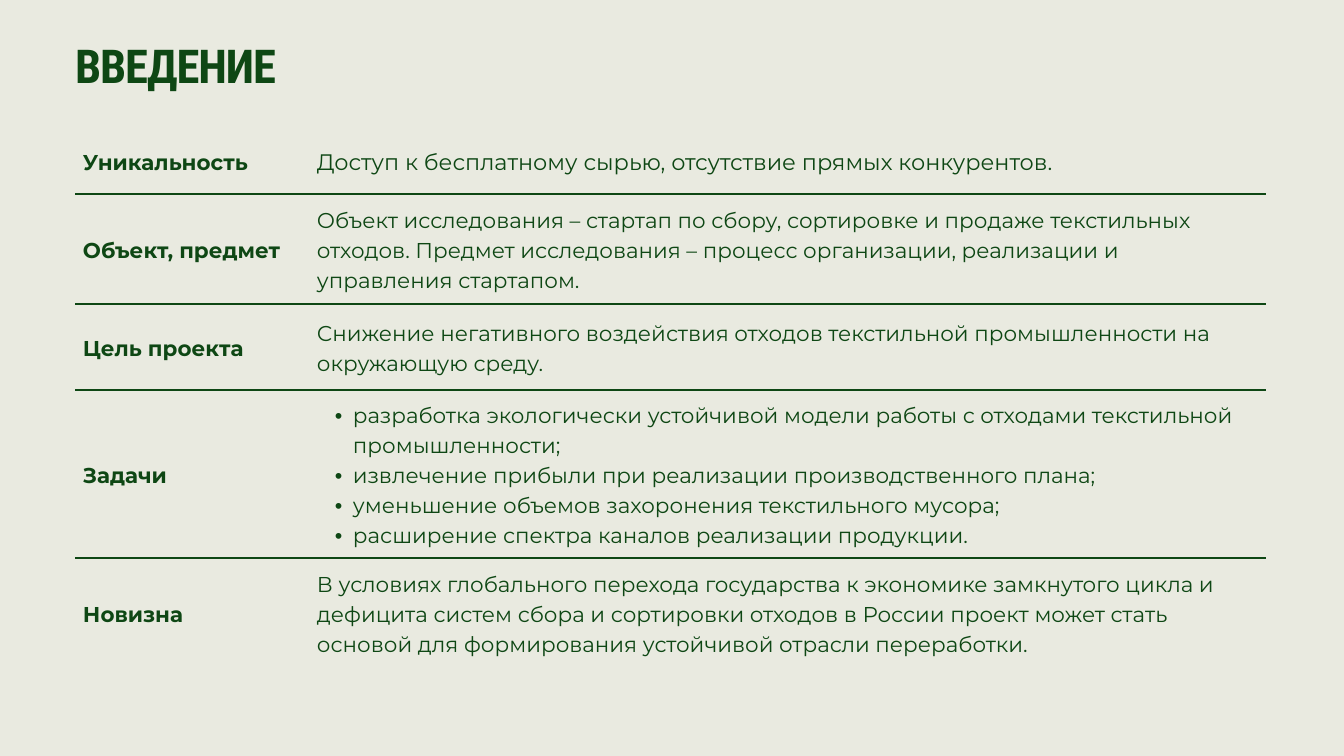
from lxml import etree
from pptx import Presentation
from pptx.dml.color import RGBColor
from pptx.enum.text import MSO_ANCHOR, MSO_AUTO_SIZE, PP_ALIGN
from pptx.oxml.ns import qn
from pptx.util import Pt

LEFT = PP_ALIGN.LEFT
TOP, MIDDLE = MSO_ANCHOR.TOP, MSO_ANCHOR.MIDDLE
NO_FIT = MSO_AUTO_SIZE.NONE

COLORS = {"paper": "E9EAE0", "green": "0E4714"}
HEAD_FONT, BODY_FONT = "Roboto Condensed", "Montserrat"

TITLE = "ВВЕДЕНИЕ"
# label, text (a list is bulleted), row height in px, text size in pt
ROWS = [
    ("Уникальность",
     "Доступ к бесплатному сырью, отсутствие прямых конкурентов.", 67, 24),
    ("Объект, предмет",
     "Объект исследования – стартап по сбору, сортировке и продаже "
     "текстильных отходов. Предмет исследования – процесс организации, "
     "реализации и управления стартапом.", 110, 23),
    ("Цель проекта",
     "Снижение негативного воздействия отходов текстильной "
     "промышленности на окружающую среду.", 86, 23),
    ("Задачи",
     ["разработка экологически устойчивой модели работы с отходами "
      "текстильной промышленности;",
      "извлечение прибыли при реализации производственного плана;",
      "уменьшение объемов захоронения текстильного мусора;",
      "расширение спектра каналов реализации продукции."], 168, 23),
    ("Новизна",
     "В условиях глобального перехода государства к экономике замкнутого "
     "цикла и дефицита систем сбора и сортировки отходов в России проект "
     "может стать основой для формирования устойчивой отрасли "
     "переработки.", 109, 23),
]
COLS = [234, 957]
X, TITLE_Y, TABLE_Y = 75, 52, 127
TITLE_W, TITLE_H = 1193, 52
PAD, INDENT, HANG = 8, 36, 18
LEADING = 1.4


def px(n):
    return round(n * 914400 / 67.2)


def write(frame, text, size, font=BODY_FONT, bold=False, lead=None, track=0):
    """Fill a text frame; a list of strings becomes bullets."""
    listed = isinstance(text, list)
    for i, line in enumerate(text if listed else [text]):
        para = frame.paragraphs[0] if i == 0 else frame.add_paragraph()
        para.alignment = LEFT
        para.line_spacing = Pt(lead or round(size * LEADING, 1))
        if listed:
            para.level = 1
            props = para._p.get_or_add_pPr()
            props.set("marL", str(px(INDENT)))
            props.set("indent", str(-px(HANG)))
            etree.SubElement(props, qn("a:buFont"), typeface="Arial")
            etree.SubElement(props, qn("a:buChar"), char="•")
        run = para.add_run()
        run.text = line
        run.font.name = font
        run.font.size = Pt(size)
        run.font.bold = bold
        run.font.color.rgb = RGBColor.from_string(COLORS["green"])
        if track:
            run._r.get_or_add_rPr().set("spc", str(track))


def rule(cell, sides):
    """Draw the named cell borders and clear the others."""
    props = cell._tc.get_or_add_tcPr()
    for i, side in enumerate("LRTB"):
        line = etree.Element(qn(f"a:ln{side}"))
        if side in sides:
            line.set("w", str(Pt(1.5)))
            fill = etree.SubElement(line, qn("a:solidFill"))
            etree.SubElement(fill, qn("a:srgbClr"), val=COLORS["green"])
        else:
            line.set("w", "0")
            etree.SubElement(line, qn("a:noFill"))
        props.insert(i, line)


def add_title(slide):
    title = slide.shapes.title
    title.left, title.top = px(X), px(TITLE_Y)
    title.width, title.height = px(TITLE_W), px(TITLE_H)
    frame = title.text_frame
    frame.margin_left = frame.margin_right = 0
    frame.margin_top = frame.margin_bottom = 0
    frame.vertical_anchor = TOP
    frame.auto_size = NO_FIT
    write(frame, TITLE, 50, font=HEAD_FONT, bold=True, lead=43.5, track=-120)


def add_grid(slide):
    high = sum(row[2] for row in ROWS)
    grid = slide.shapes.add_table(len(ROWS), len(COLS), px(X), px(TABLE_Y),
                                  px(sum(COLS)), px(high)).table
    grid.first_row = grid.horz_banding = False
    for col, wide in zip(grid.columns, COLS):
        col.width = px(wide)
    last = len(ROWS) - 1
    for r, (label, text, tall, size) in enumerate(ROWS):
        grid.rows[r].height = px(tall)
        sides = ("T" if r > 0 else "") + ("B" if r < last else "")
        for c in range(len(COLS)):
            cell = grid.cell(r, c)
            cell.fill.background()
            cell.vertical_anchor = MIDDLE
            cell.margin_left = cell.margin_right = px(PAD)
            cell.margin_top = cell.margin_bottom = px(PAD)
            rule(cell, sides)
        write(grid.cell(r, 0).text_frame, label, 23, bold=True)
        write(grid.cell(r, 1).text_frame, text, size)


def main():
    deck = Presentation()
    deck.slide_width, deck.slide_height = px(1344), px(756)
    slide = deck.slides.add_slide(deck.slide_layouts[5])
    back = slide.background.fill
    back.solid()
    back.fore_color.rgb = RGBColor.from_string(COLORS["paper"])
    add_grid(slide)
    add_title(slide)
    deck.save("out.pptx")


if __name__ == "__main__":
    main()
